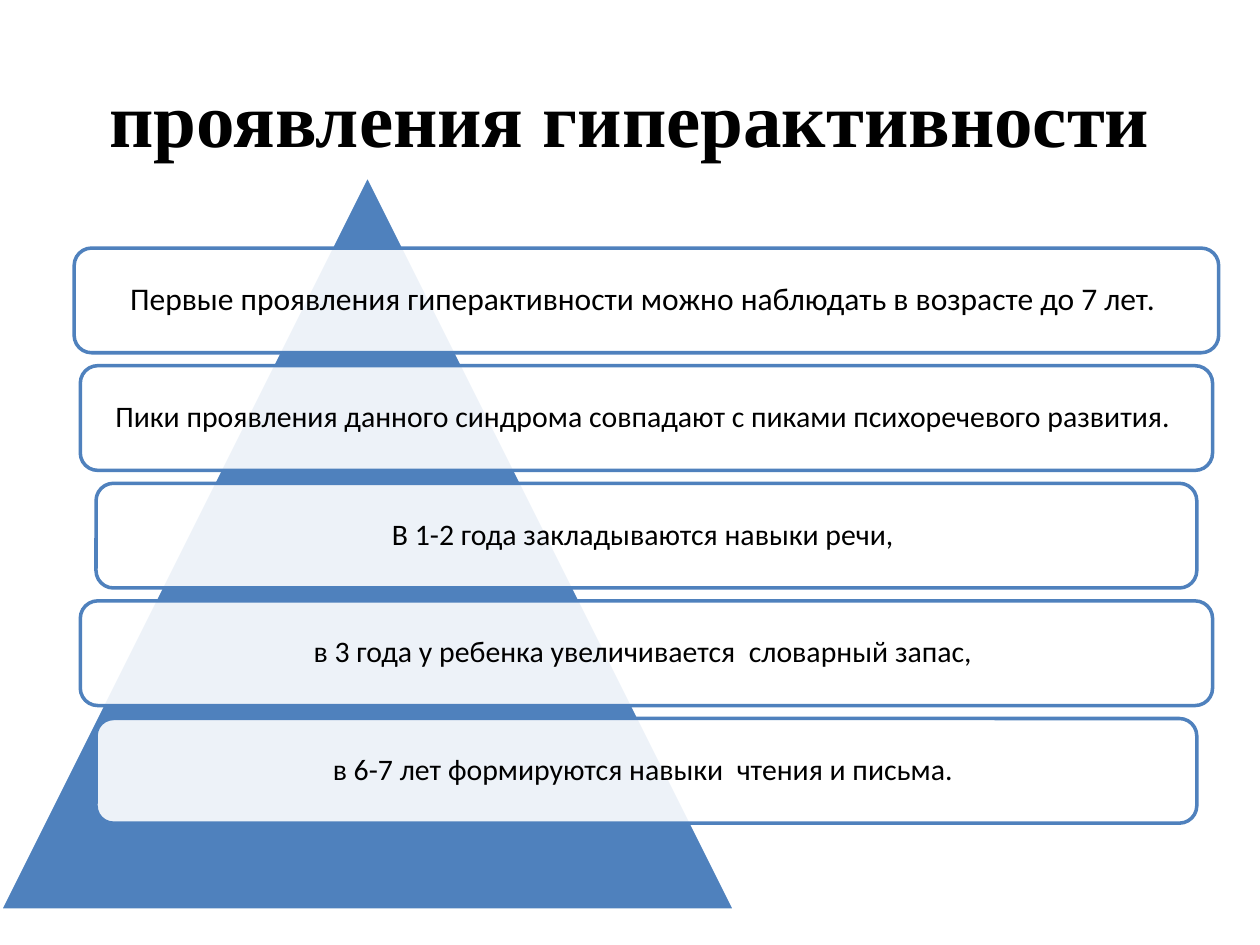
import pptx
import pptx.util
import pptx.dml.color
import pptx.enum.shapes
import pptx.enum.text
import pptx.oxml.ns
import lxml.etree

Pt = pptx.util.Pt
SHAPES = pptx.enum.shapes.MSO_SHAPE


def color(value):
    return pptx.dml.color.RGBColor.from_string(value)


def add_figure(slide, kind, bounds, fill, line):
    figure = slide.shapes.add_shape(kind, *[Pt(length) for length in bounds])
    figure.shadow.inherit = False
    figure.fill.solid()
    figure.fill.fore_color.rgb = color(fill)
    figure.line.color.rgb = color(line)
    figure.line.width = Pt(2)
    return figure


deck = pptx.Presentation()
deck.slide_width = Pt(720)
deck.slide_height = Pt(540)
page = deck.slides.add_slide(deck.slide_layouts[5])

title = page.shapes.title
title.left, title.top, title.width, title.height = Pt(36), Pt(21.6), Pt(648), Pt(90)
title.text_frame.text = "проявления гиперактивности"
title.text_frame.vertical_anchor = pptx.enum.text.MSO_ANCHOR.MIDDLE
title_para = title.text_frame.paragraphs[0]
title_para.alignment = pptx.enum.text.PP_ALIGN.CENTER
title_font = title_para.runs[0].font
title_font.name = "Times New Roman"
title_font.size = Pt(44)
title_font.bold = True
title_font.color.rgb = color("000000")

add_figure(page, SHAPES.ISOSCELES_TRIANGLE, (0, 100, 420, 420), "4F81BD", "FFFFFF")

statements = [
    ("Первые проявления гиперактивности можно наблюдать в возрасте до 7 лет. ", 654, 18),
    ("Пики проявления данного синдрома совпадают с пиками психоречевого развития. ", 647, 17),
    ("В 1-2 года закладываются навыки речи, ", 629, 17),
    ("в 3 года у ребенка увеличивается  словарный запас, ", 647, 17),
    ("в 6-7 лет формируются навыки  чтения и письма. ", 629, 17),
]
center, first_top, step, height = 369.4, 141.8, 67.2, 59.8

for index, (statement, width, size) in enumerate(statements):
    bounds = (center - width / 2, first_top + index * step, width, height)
    box = add_figure(page, SHAPES.ROUNDED_RECTANGLE, bounds, "FFFFFF", "4F81BD")
    fill_color = box.fill._xPr.find(".//" + pptx.oxml.ns.qn("a:srgbClr"))
    lxml.etree.SubElement(fill_color, pptx.oxml.ns.qn("a:alpha"), val="90000")

    frame = box.text_frame
    frame.text = statement
    frame.word_wrap = True
    frame.vertical_anchor = pptx.enum.text.MSO_ANCHOR.MIDDLE
    frame.margin_left = frame.margin_right = Pt(5)
    frame.margin_top = frame.margin_bottom = Pt(5)
    para = frame.paragraphs[0]
    para.alignment = pptx.enum.text.PP_ALIGN.CENTER
    para.line_spacing = 0.9
    font = para.runs[0].font
    font.name = "Calibri"
    font.size = Pt(size)
    font.color.rgb = color("000000")

deck.save("out.pptx")
